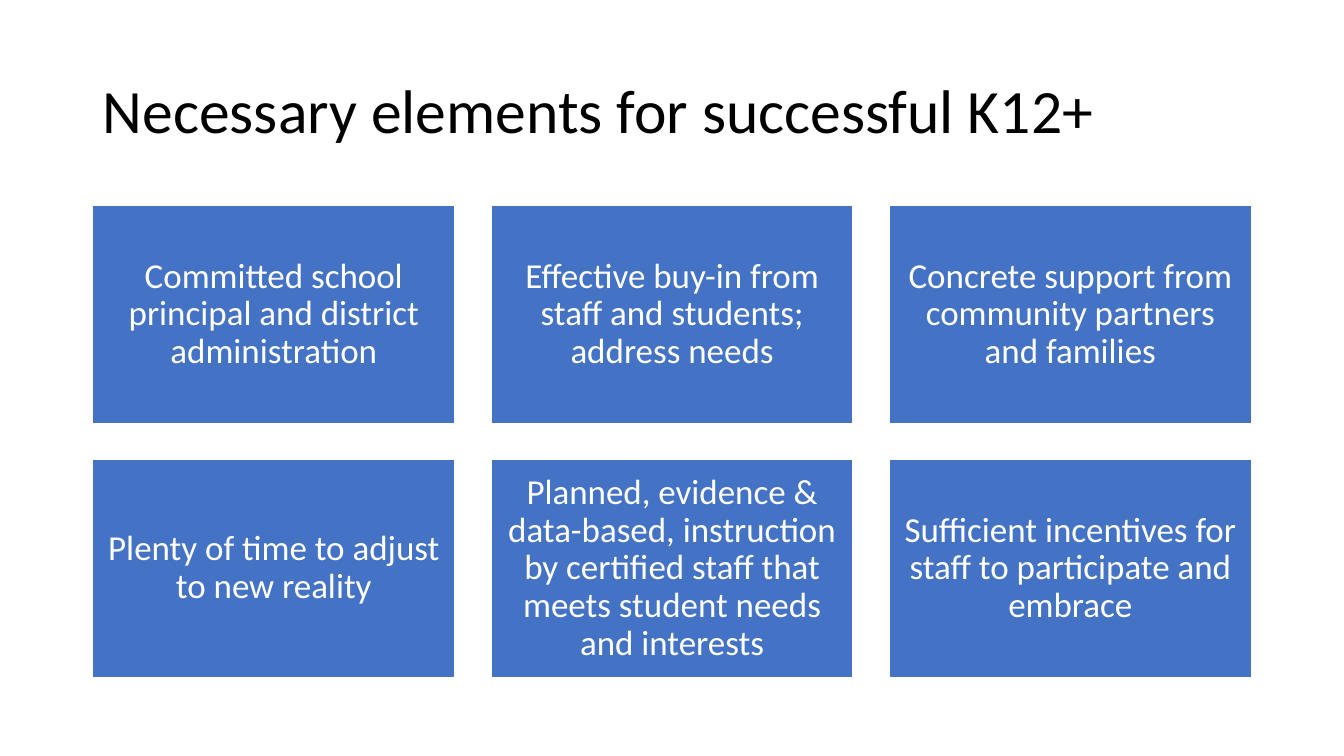
from dataclasses import dataclass

from pptx import Presentation
from pptx import util as u
from pptx.dml.color import RGBColor
from pptx.enum import shapes, text


@dataclass(frozen=True)
class Theme:
    font: str = "Calibri"
    title_size: int = 44
    card_size: int = 25
    ink: RGBColor = RGBColor(0x00, 0x00, 0x00)
    paper: RGBColor = RGBColor(0xFF, 0xFF, 0xFF)
    accent: RGBColor = RGBColor(0x44, 0x72, 0xC4)
    line_spacing: float = 0.9


THEME = Theme()

ELEMENTS = [
    "Committed school principal and district administration",
    "Effective buy-in from staff and students; address needs",
    "Concrete support from community partners and families",
    "Plenty of time to adjust to new reality",
    "Planned, evidence & data-based, instruction by certified staff "
    "that meets student needs and interests",
    "Sufficient incentives for staff to participate and embrace",
]


def write(frame, wording, size, color, align):
    frame.text = wording
    frame.word_wrap = True
    frame.auto_size = text.MSO_AUTO_SIZE.NONE
    frame.vertical_anchor = text.MSO_ANCHOR.MIDDLE
    paragraph = frame.paragraphs[0]
    paragraph.alignment = align
    paragraph.line_spacing = THEME.line_spacing
    paragraph.font.name = THEME.font
    paragraph.font.size = u.Pt(size)
    paragraph.font.color.rgb = color


def place_title(slide, wording, left, top, width, height):
    title = slide.shapes.title
    title.left, title.top = u.Inches(left), u.Inches(top)
    title.width, title.height = u.Inches(width), u.Inches(height)
    write(title.text_frame, wording, THEME.title_size, THEME.ink, text.PP_ALIGN.LEFT)


def add_card(slide, wording, left, top, width, height):
    card = slide.shapes.add_shape(
        shapes.MSO_SHAPE.RECTANGLE,
        u.Inches(left), u.Inches(top), u.Inches(width), u.Inches(height),
    )
    card.shadow.inherit = False
    card.fill.solid()
    card.fill.fore_color.rgb = THEME.accent
    card.line.color.rgb = THEME.paper
    card.line.width = u.Pt(1)
    frame = card.text_frame
    frame.margin_left = frame.margin_right = u.Inches(0.1)
    frame.margin_top = frame.margin_bottom = u.Inches(0.1)
    write(frame, wording, THEME.card_size, THEME.paper, text.PP_ALIGN.CENTER)


def add_card_grid(slide, wordings, left, top, width, height, columns=3, gap=0.36):
    rows = -(-len(wordings) // columns)
    card_width = (width - gap * (columns - 1)) / columns
    card_height = (height - gap * (rows - 1)) / rows
    for index, wording in enumerate(wordings):
        row, column = divmod(index, columns)
        add_card(
            slide, wording,
            left + column * (card_width + gap),
            top + row * (card_height + gap),
            card_width, card_height,
        )


def main():
    deck = Presentation()
    deck.slide_width, deck.slide_height = u.Inches(13.33), u.Inches(7.5)
    slide = deck.slides.add_slide(deck.slide_layouts[5])
    place_title(slide, "Necessary elements for successful K12+", 0.92, 0.4, 11.5, 1.45)
    add_card_grid(slide, ELEMENTS, 0.92, 2.04, 11.49, 4.68)
    deck.save("out.pptx")


if __name__ == "__main__":
    main()
